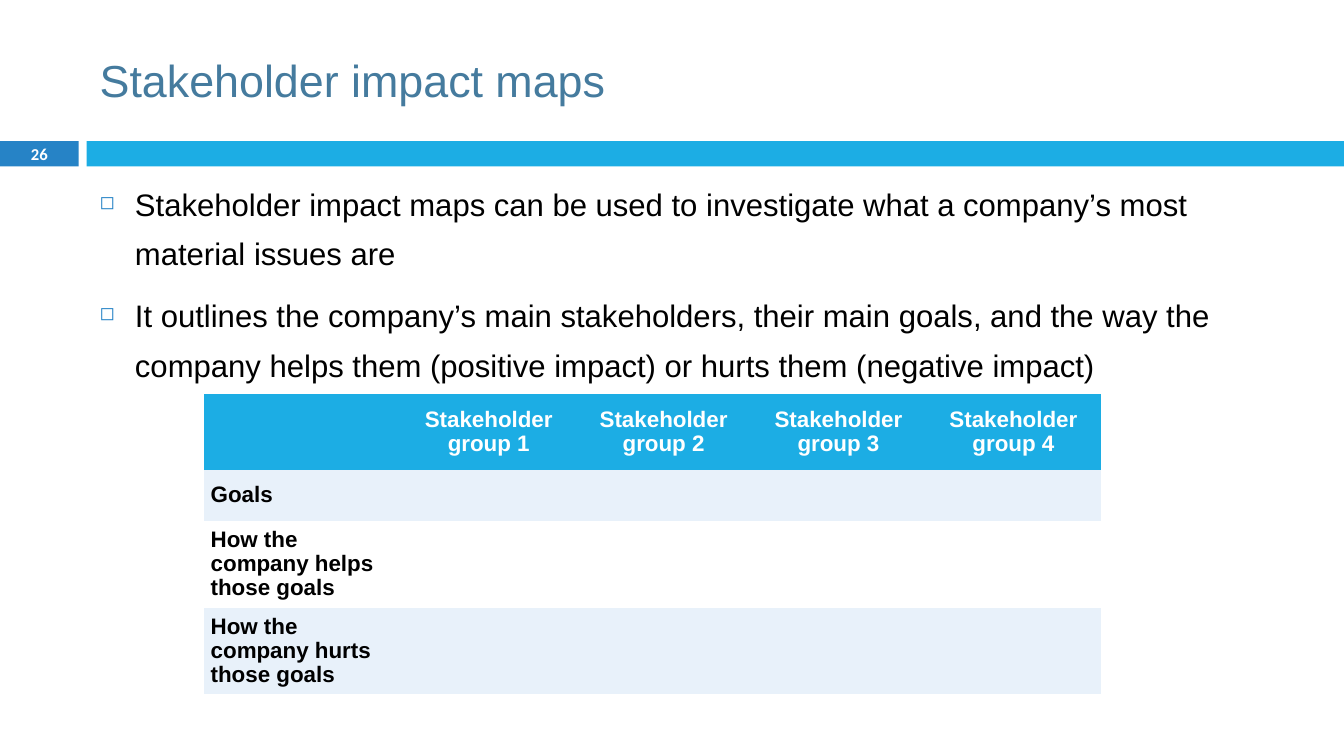
from lxml import etree
from pptx import Presentation
from pptx.dml.color import RGBColor
from pptx.enum.shapes import MSO_SHAPE as Shape
from pptx.enum.text import MSO_ANCHOR as Anchor, PP_ALIGN as Align
from pptx.oxml.ns import qn
from pptx.util import Inches, Pt

COLORS = {
    "title": "457B9E",
    "badge": "2683C6",
    "accent": "1CADE4",
    "band": "E8F1FA",
    "white": "FFFFFF",
    "black": "000000",
}
PLAIN_TABLE = "{2D5ABB26-0587-4C30-8999-92F81FD0307C}"


class SlideBuilder:
    def __init__(self, slide, font="Arial"):
        self.slide = slide
        self.font = font

    def color(self, name):
        return RGBColor.from_string(COLORS[name])

    def style(self, para, size, color, bold=False, align=Align.LEFT, font=None):
        para.alignment = align
        para.font.name = font or self.font
        para.font.size = Pt(size)
        para.font.bold = bold
        para.font.color.rgb = self.color(color)

    def fill(self, item, color):
        item.fill.solid()
        item.fill.fore_color.rgb = self.color(color)

    def bar(self, left, top, width, height, color):
        bar = self.slide.shapes.add_shape(
            Shape.RECTANGLE, Inches(left), Inches(top), Inches(width), Inches(height))
        bar.shadow.inherit = False
        self.fill(bar, color)
        bar.line.fill.background()

    def text(self, left, top, width, height, lines, size, color,
             anchor=Anchor.MIDDLE, **style):
        box = self.slide.shapes.add_textbox(
            Inches(left), Inches(top), Inches(width), Inches(height))
        frame = box.text_frame
        frame.word_wrap = True
        frame.vertical_anchor = anchor
        frame.text = "\n".join(lines)
        for para in frame.paragraphs:
            self.style(para, size, color, **style)
        return frame

    def bullets(self, left, top, width, height, lines, size):
        frame = self.text(left, top, width, height, lines, size, "black", Anchor.TOP)
        for para in frame.paragraphs:
            para.line_spacing = 1.34
            para.space_before = Pt(8)
            props = para._p.get_or_add_pPr()
            props.set("marL", str(Inches(0.35)))
            props.set("indent", str(Inches(-0.35)))
            tint = etree.Element(qn("a:buClr"))
            etree.SubElement(tint, qn("a:srgbClr"), val=COLORS["badge"])
            scale = etree.Element(qn("a:buSzPct"), val="60000")
            mark = etree.Element(qn("a:buChar"), char="◻")
            position = props.index(props.find(qn("a:defRPr")))
            props[position:position] = [tint, scale, mark]

    def table(self, left, top, widths, heights, rows, size):
        holder = self.slide.shapes.add_table(
            len(rows), len(widths), Inches(left), Inches(top),
            Inches(sum(widths)), Inches(sum(heights)))
        table = holder.table
        table._tbl.tblPr.find(qn("a:tableStyleId")).text = PLAIN_TABLE
        for column, width in zip(table.columns, widths):
            column.width = Inches(width)
        for row, height in zip(table.rows, heights):
            row.height = Inches(height)
        for index, labels in enumerate(rows):
            header = index == 0
            background = "accent" if header else ("white", "band")[index % 2]
            for cell, label in zip(table.rows[index].cells, labels):
                self.fill(cell, background)
                cell.margin_left = cell.margin_right = Inches(0.07)
                cell.margin_top = cell.margin_bottom = 0
                cell.vertical_anchor = Anchor.MIDDLE
                cell.text = label
                para = cell.text_frame.paragraphs[0]
                para.line_spacing = 0.96
                self.style(para, size, "white" if header else "black", bold=True,
                           align=Align.CENTER if header else Align.LEFT)


def main():
    deck = Presentation()
    deck.slide_width, deck.slide_height = Inches(13.33), Inches(7.5)
    page = SlideBuilder(deck.slides.add_slide(deck.slide_layouts[6]))

    page.bar(0, 1.4, 0.78, 0.25, "badge")
    page.bar(0.86, 1.4, 12.47, 0.25, "accent")
    page.text(0.89, 0.25, 11.89, 1.08, ["Stakeholder impact maps"], 32, "title")
    page.text(0, 1.39, 0.78, 0.27, ["26"], 11.9, "white",
              bold=True, align=Align.CENTER, font="Calibri")
    page.bullets(0.89, 1.66, 11.52, 2.25, [
        "Stakeholder impact maps can be used to investigate what a company’s most "
        "material issues are",
        "It outlines the company’s main stakeholders, their main goals, and the way the "
        "company helps them (positive impact) or hurts them (negative impact)",
    ], 22.2)

    groups = [f"Stakeholder group {number}" for number in range(1, 5)]
    topics = ["Goals", "How the company helps those goals",
              "How the company hurts those goals"]
    rows = [["", *groups]] + [[topic] + [""] * len(groups) for topic in topics]
    page.table(2.02, 3.91, [1.96] + [1.735] * len(groups),
               [0.75, 0.51, 0.86, 0.86], rows, 16)

    deck.save("out.pptx")


if __name__ == "__main__":
    main()
